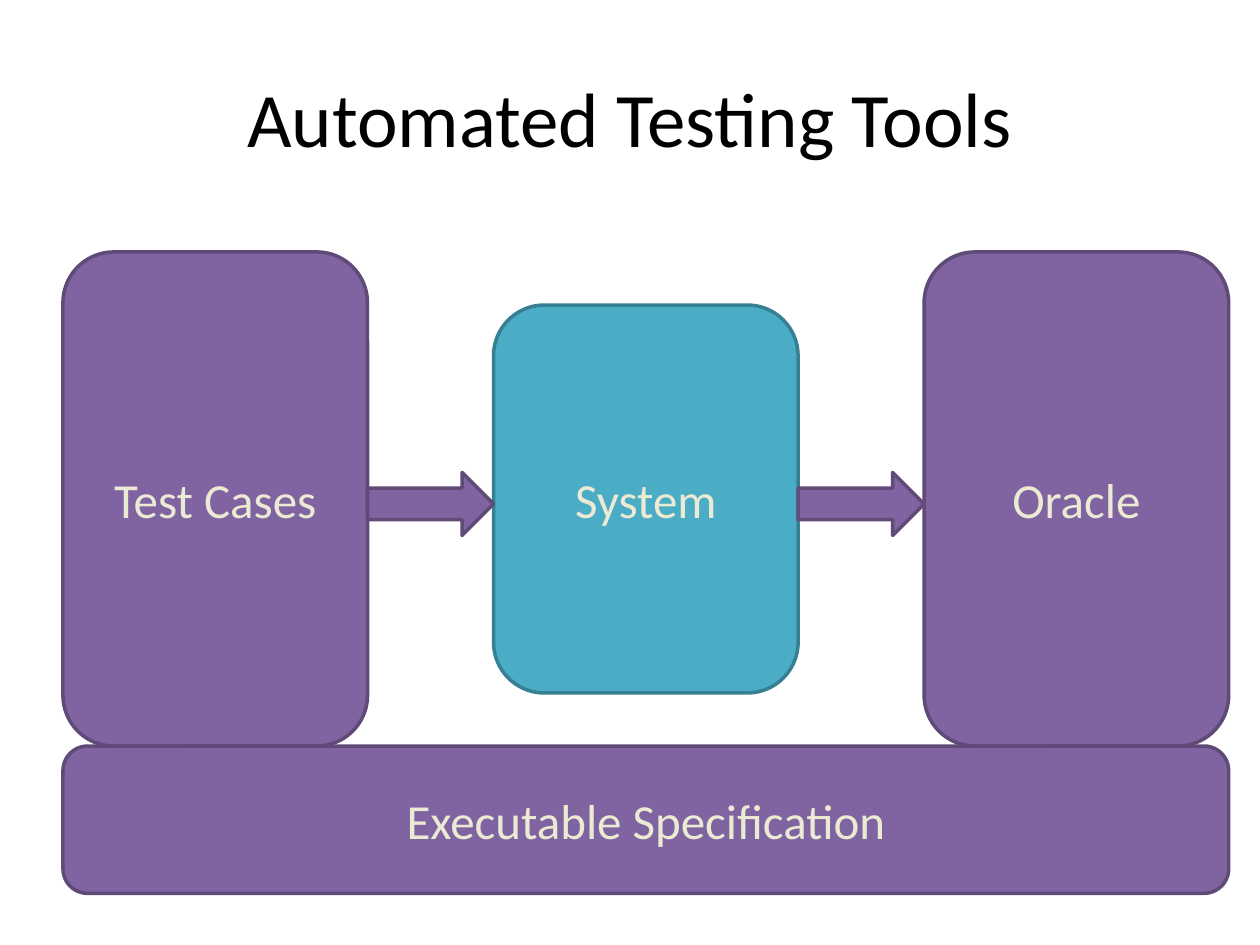
from pptx import Presentation
from pptx.dml.color import RGBColor as Rgb
from pptx.enum.shapes import MSO_SHAPE as Kind
from pptx.enum.text import MSO_ANCHOR as Anchor, PP_ALIGN as Align
from pptx.util import Cm, Pt

# Content: label, height in cm, tone
TITLE = "Automated Testing Tools"
STEPS = [
    ("Test Cases", 9.96, "tool"),
    ("System", 7.82, "core"),
    ("Oracle", 9.96, "tool"),
]
BASE = "Executable Specification"

THEME = {
    "back": "FFFFFF",
    "tool": ("8064A2", "5F4A78"),
    "core": ("4BACC6", "377F92"),
    "edge": 2,
    "title": {"name": "Calibri", "size": Pt(44), "color": "000000"},
    "label": {"name": "Calibri", "size": Pt(28), "color": "EBEAD3"},
}

# Layout in cm
LEFT, TOP = 1.27, 5.08
WIDE, GAP = 6.14, 2.54
TALL = max(high for _, high, _ in STEPS)
SPAN = len(STEPS) * WIDE + (len(STEPS) - 1) * GAP
DEEP = 2.97
HEAD, AXIS = 1.27, 10.16


def write(shape, text, style):
    frame = shape.text_frame
    frame.word_wrap = True
    frame.vertical_anchor = Anchor.MIDDLE
    para = frame.paragraphs[0]
    para.alignment = Align.CENTER
    run = para.add_run()
    run.text = text
    for key, val in style.items():
        if key == "color":
            run.font.color.rgb = Rgb.from_string(val)
        else:
            setattr(run.font, key, val)


def draw(slide, kind, area, tone, text=""):
    shape = slide.shapes.add_shape(kind, *map(Cm, area))
    fill, line = THEME[tone]
    shape.shadow.inherit = False
    shape.fill.solid()
    shape.fill.fore_color.rgb = Rgb.from_string(fill)
    shape.line.color.rgb = Rgb.from_string(line)
    shape.line.width = Pt(THEME["edge"])
    if text:
        write(shape, text, THEME["label"])


def main():
    deck = Presentation()
    deck.slide_width, deck.slide_height = Cm(25.4), Cm(19.05)
    slide = deck.slides.add_slide(deck.slide_layouts[6])
    back = slide.background.fill
    back.solid()
    back.fore_color.rgb = Rgb.from_string(THEME["back"])

    # Title
    box = slide.shapes.add_textbox(Cm(1.27), Cm(0.76), Cm(22.86), Cm(3.18))
    write(box, TITLE, THEME["title"])

    # Steps, centred on one row
    lefts = [LEFT + i * (WIDE + GAP) for i in range(len(STEPS))]
    for left, (text, high, tone) in zip(lefts, STEPS):
        area = (left, TOP + (TALL - high) / 2, WIDE, high)
        draw(slide, Kind.ROUNDED_RECTANGLE, area, tone, text)

    # Base under all steps
    area = (LEFT, TOP + TALL, SPAN, DEEP)
    draw(slide, Kind.ROUNDED_RECTANGLE, area, "tool", BASE)

    # Block arrows fill the gaps
    for left in lefts[:-1]:
        area = (left + WIDE, AXIS - HEAD / 2, GAP, HEAD)
        draw(slide, Kind.RIGHT_ARROW, area, "tool")

    deck.save("out.pptx")


if __name__ == "__main__":
    main()
